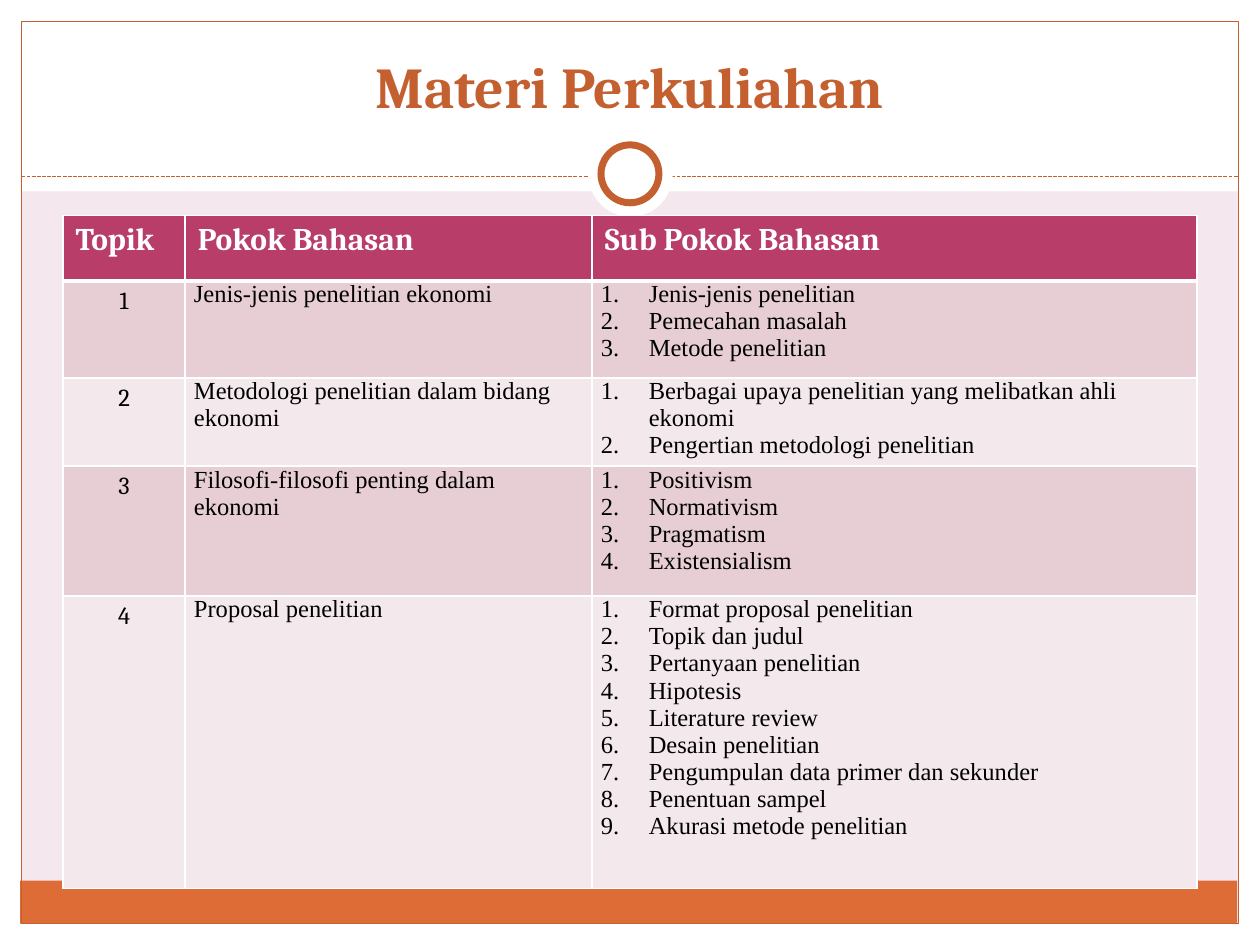
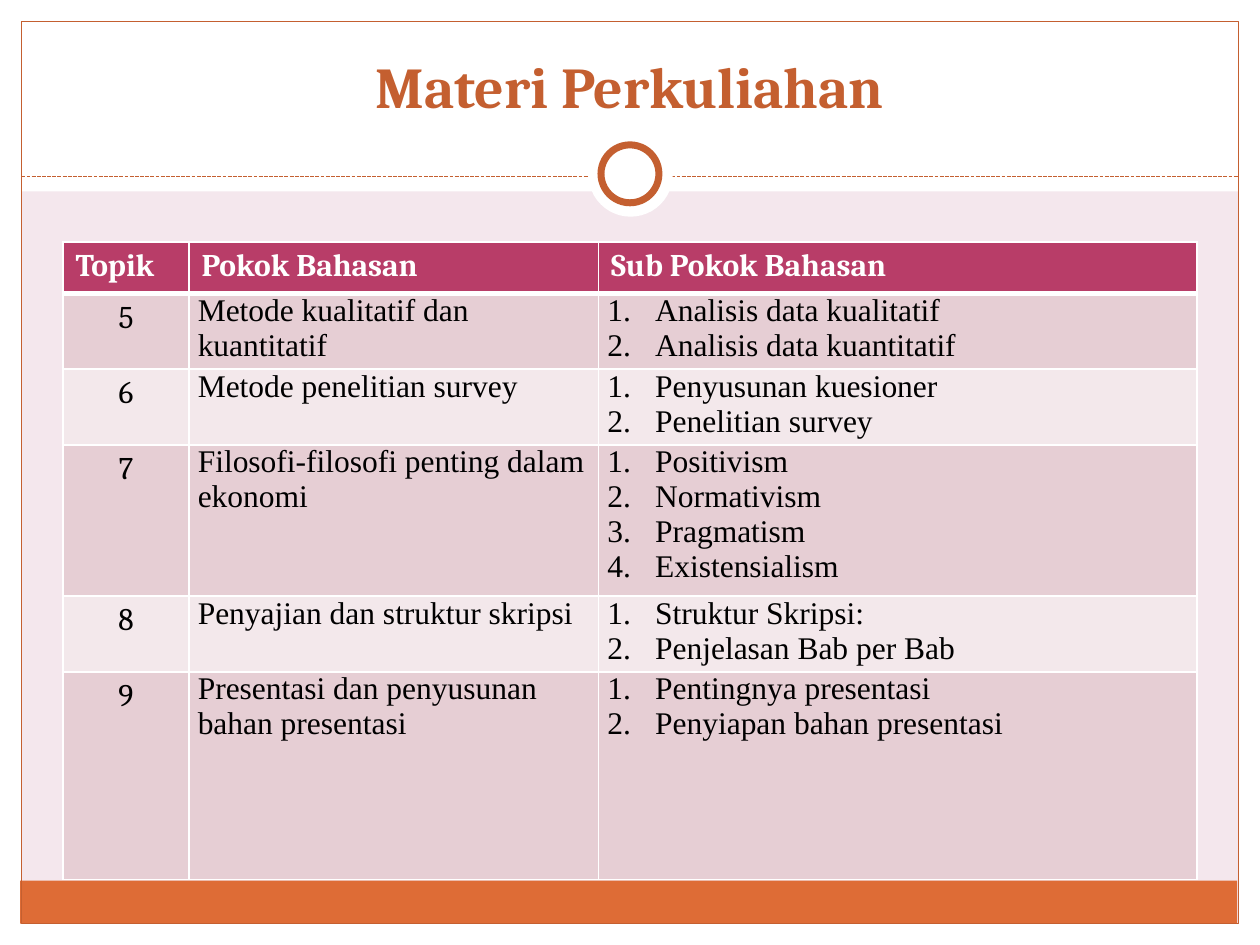
from dataclasses import dataclass
from typing import Optional

from lxml import etree
from pptx import Presentation
from pptx.dml.color import RGBColor
from pptx.enum import dml, shapes, text
from pptx.oxml.ns import qn
from pptx.util import Inches, Pt


# Theme: colours, fonts and sizes
@dataclass(frozen=True)
class Theme:
    background: str = "F4E7ED"
    white: str = "FFFFFF"
    black: str = "000000"
    accent: str = "C45F30"
    footer: str = "DE6C36"
    header: str = "B83D68"
    bands: tuple[str, str] = ("E6CED4", "F3E8EB")
    heading_font: str = "Cambria"
    body_font: str = "Times New Roman"
    title_size: float = 33
    header_size: float = 18
    border: float = 1
    header_border: float = 3


THEME = Theme()


@dataclass(frozen=True)
class Decoration:
    kind: shapes.MSO_SHAPE
    left: float
    top: float
    width: float
    height: float
    fill: Optional[str] = None
    line: Optional[str] = None
    line_width: float = 0.75


@dataclass(frozen=True)
class Topic:
    number: int
    subject: str
    subtopics: tuple[str, ...]
    height: float


@dataclass(frozen=True)
class TopicSlide:
    table_top: float
    column_widths: tuple[float, float, float]
    header_height: float
    body_size: float
    topics: tuple[Topic, ...]


RECTANGLE, OVAL = shapes.MSO_SHAPE.RECTANGLE, shapes.MSO_SHAPE.OVAL
PANELS = (
    Decoration(RECTANGLE, 0, 7.33, 10, 0.17, THEME.white),
    Decoration(RECTANGLE, 0, 0, 10, 1.52, THEME.white),
    Decoration(RECTANGLE, 0, 0, 0.17, 7.5, THEME.white),
    Decoration(RECTANGLE, 9.83, 0, 0.17, 7.5, THEME.white),
    Decoration(RECTANGLE, 0.16, 6.99, 9.66, 0.34, THEME.footer),
    Decoration(RECTANGLE, 0.17, 0.17, 9.66, 7.16, line=THEME.accent),
)
RING = (
    Decoration(OVAL, 4.67, 1.05, 0.67, 0.67, THEME.white),
    Decoration(OVAL, 4.77, 1.15, 0.46, 0.46, THEME.white, THEME.accent, 4),
)

TITLE = "Materi Perkuliahan"
HEADINGS = ("Topik", "Pokok Bahasan", "Sub Pokok Bahasan")
PHILOSOPHY = "Filosofi-filosofi penting dalam ekonomi"
PHILOSOPHIES = ("Positivism", "Normativism", "Pragmatism", "Existensialism")

SLIDES = (
    TopicSlide(1.71, (0.97, 3.23, 4.8), 0.52, 14, (
        Topic(1, "Jenis-jenis penelitian ekonomi",
              ("Jenis-jenis penelitian", "Pemecahan masalah", "Metode penelitian"), 0.77),
        Topic(2, "Metodologi penelitian dalam bidang ekonomi",
              ("Berbagai upaya penelitian yang melibatkan ahli ekonomi",
               "Pengertian metodologi penelitian"), 0.52),
        Topic(3, PHILOSOPHY, PHILOSOPHIES, 1.03),
        Topic(4, "Proposal penelitian",
              ("Format proposal penelitian", "Topik dan judul", "Pertanyaan penelitian",
               "Hipotesis", "Literature review", "Desain penelitian",
               "Pengumpulan data primer dan sekunder", "Penentuan sampel",
               "Akurasi metode penelitian"), 2.32),
    )),
    TopicSlide(1.92, (1, 3.25, 4.75), 0.41, 18, (
        Topic(5, "Metode kualitatif dan kuantitatif",
              ("Analisis data kualitatif", "Analisis data kuantitatif"), 0.57),
        Topic(6, "Metode penelitian survey",
              ("Penyusunan kuesioner", "Penelitian survey"), 0.57),
        Topic(7, PHILOSOPHY, PHILOSOPHIES, 1.14),
        Topic(8, "Penyajian dan struktur skripsi",
              ("Struktur Skripsi:", "Penjelasan Bab per Bab"), 0.57),
        Topic(9, "Presentasi dan penyusunan bahan presentasi",
              ("Pentingnya presentasi", "Penyiapan bahan presentasi"), 1.65),
    )),
)


def rgb(color: str) -> RGBColor:
    return RGBColor.from_string(color)


def style_paragraph(paragraph, font: str, size: float, color: str,
                    bold: bool = False, centered: bool = False) -> None:
    paragraph.font.name = font
    paragraph.font.size = Pt(size)
    paragraph.font.bold = bold
    paragraph.font.color.rgb = rgb(color)
    paragraph.alignment = text.PP_ALIGN.CENTER if centered else text.PP_ALIGN.LEFT


# Frame and title
def draw_decoration(slide, item: Decoration) -> None:
    shape = slide.shapes.add_shape(item.kind, Inches(item.left), Inches(item.top),
                                   Inches(item.width), Inches(item.height))
    shape.shadow.inherit = False
    if item.fill:
        shape.fill.solid()
        shape.fill.fore_color.rgb = rgb(item.fill)
    else:
        shape.fill.background()
    if item.line:
        shape.line.color.rgb = rgb(item.line)
        shape.line.width = Pt(item.line_width)
    else:
        shape.line.fill.background()


def draw_divider(slide) -> None:
    divider = slide.shapes.add_connector(shapes.MSO_CONNECTOR.STRAIGHT, Inches(0.17),
                                         Inches(1.4), Inches(9.83), Inches(1.4))
    divider.line.color.rgb = rgb(THEME.accent)
    divider.line.width = Pt(0.75)
    divider.line.dash_style = dml.MSO_LINE.SQUARE_DOT
    etree.SubElement(divider._element.spPr, qn("a:effectLst"))


def draw_frame(slide) -> None:
    slide.background.fill.solid()
    slide.background.fill.fore_color.rgb = rgb(THEME.background)
    for panel in PANELS:
        draw_decoration(slide, panel)
    draw_divider(slide)
    for circle in RING:
        draw_decoration(slide, circle)


def draw_title(slide) -> None:
    box = slide.shapes.add_textbox(Inches(0.33), Inches(0.25), Inches(9.33), Inches(0.75))
    frame = box.text_frame
    frame.word_wrap = True
    frame.vertical_anchor = text.MSO_ANCHOR.BOTTOM
    frame.text = TITLE
    style_paragraph(frame.paragraphs[0], THEME.heading_font, THEME.title_size,
                    THEME.accent, bold=True, centered=True)


# Topic table
def paint_cell(cell, color: str, top: float = THEME.border,
               bottom: float = THEME.border) -> None:
    properties = cell._tc.get_or_add_tcPr()
    widths = {"L": THEME.border, "R": THEME.border, "T": top, "B": bottom}
    for side, width in widths.items():
        line = etree.SubElement(properties, qn(f"a:ln{side}"), w=str(Pt(width)))
        fill = etree.SubElement(line, qn("a:solidFill"))
        etree.SubElement(fill, qn("a:srgbClr"), val=THEME.white)
    cell.fill.solid()
    cell.fill.fore_color.rgb = rgb(color)


def number_paragraph(paragraph) -> None:
    properties = paragraph._p.get_or_add_pPr()
    properties.set("marL", str(Inches(0.38)))
    properties.set("indent", str(Inches(-0.38)))
    etree.SubElement(properties, qn("a:buAutoNum"), type="arabicPeriod")


def fill_body_cell(cell, lines: tuple[str, ...], size: float, numbered: bool) -> None:
    cell.margin_left = cell.margin_right = Inches(0.07)
    cell.margin_top = cell.margin_bottom = 0
    cell.text = "\n".join(lines)
    for paragraph in cell.text_frame.paragraphs:
        if numbered:
            number_paragraph(paragraph)
        style_paragraph(paragraph, THEME.body_font, size, THEME.black)


def draw_topic_table(slide, content: TopicSlide) -> None:
    heights = [content.header_height] + [topic.height for topic in content.topics]
    table = slide.shapes.add_table(
        len(heights), len(HEADINGS), Inches(0.5), Inches(content.table_top),
        Inches(sum(content.column_widths)), Inches(sum(heights))).table
    table.first_row = table.horz_banding = False
    for column, width in zip(table.columns, content.column_widths):
        column.width = Inches(width)
    for row, height in zip(table.rows, heights):
        row.height = Inches(height)

    for cell, heading in zip(table.rows[0].cells, HEADINGS):
        paint_cell(cell, THEME.header, bottom=THEME.header_border)
        cell.text = heading
        style_paragraph(cell.text_frame.paragraphs[0], THEME.heading_font,
                        THEME.header_size, THEME.white, bold=True)

    for index, topic in enumerate(content.topics):
        cells = list(table.rows[index + 1].cells)
        for cell in cells:
            paint_cell(cell, THEME.bands[index % 2],
                       top=THEME.border if index else THEME.header_border)
        number, subject, subtopics = cells
        number.text = str(topic.number)
        style_paragraph(number.text_frame.paragraphs[0], THEME.heading_font,
                        content.body_size, THEME.black, centered=True)
        fill_body_cell(subject, (topic.subject,), content.body_size, numbered=False)
        fill_body_cell(subtopics, topic.subtopics, content.body_size, numbered=True)


def main() -> None:
    presentation = Presentation()
    presentation.slide_width, presentation.slide_height = Inches(10), Inches(7.5)
    blank_layout = presentation.slide_layouts[6]
    for content in SLIDES:
        slide = presentation.slides.add_slide(blank_layout)
        draw_frame(slide)
        draw_title(slide)
        draw_topic_table(slide, content)
    presentation.save("out.pptx")


if __name__ == "__main__":
    main()
